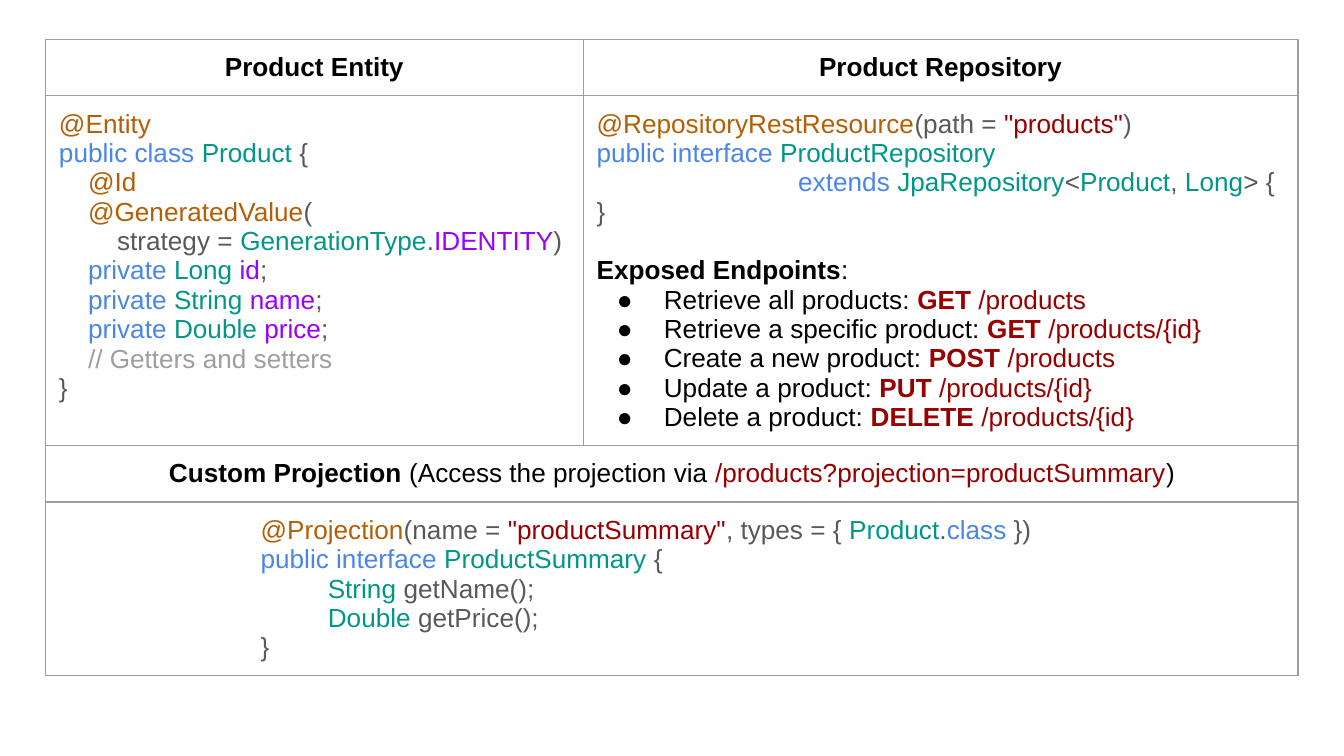
from pptx import Presentation
from pptx import util as u
from pptx.dml.color import RGBColor
from pptx.enum import text
from pptx.oxml.ns import qn
from lxml import etree

FONT, SIZE = "Arial", 14
COLORS = {
    "black": "000000", "annotation": "B45F06", "keyword": "4A86E8",
    "type": "009688", "plain": "595959", "field": "9900FF",
    "string": "980000", "comment": "9E9E9E", "border": "9E9E9E",
}
BORDER_WIDTH = 0.75

# Table geometry in points
LEFT, TOP, HEIGHT, MARGIN = 24.4, 21.2, 360, 7.2
COLUMNS = [288, 383]
ROWS = [26, 165.6, 26, 85]
INDENT, DEEP_INDENT, BULLET_INDENT, HANGING = 108, 144, 36, -25.2


# Content: a cell is a list of (runs, paragraph format); a run is (text, colour[, bold])
def title(label):
    return [([(label, "black", True)], {"centered": True})]


def code(*runs, **options):
    return list(runs), options


def field(type_name, name):
    return code(("    ", "plain"), ("private ", "keyword"), (type_name + " ", "type"),
                (name, "field"), (";", "plain"))


def getter(type_name, name):
    return code((type_name, "type"), (f" {name}();", "plain"), indent=DEEP_INDENT)


ENTITY = [
    code(("@Entity", "annotation")),
    code(("public class ", "keyword"), ("Product", "type"), (" {", "plain")),
    code(("    @Id", "annotation")),
    code(("    @GeneratedValue", "annotation"), ("(", "plain")),
    code(("        strategy = ", "plain"), ("GenerationType", "type"), (".", "plain"),
         ("IDENTITY", "field"), (")", "plain")),
    field("Long", "id"),
    field("String", "name"),
    field("Double", "price"),
    code(("    // Getters and setters", "comment")),
    code(("}", "plain")),
]

ENDPOINTS = [
    ("Retrieve all products", "GET", "/products"),
    ("Retrieve a specific product", "GET", "/products/{id}"),
    ("Create a new product", "POST", "/products"),
    ("Update a product", "PUT", "/products/{id}"),
    ("Delete a product", "DELETE", "/products/{id}"),
]

REPOSITORY = [
    code(("@RepositoryRestResource", "annotation"), ("(path = ", "plain"),
         ('"products"', "string"), (")", "plain")),
    code(("public interface ", "keyword"), ("ProductRepository", "type")),
    code(("extends ", "keyword"), ("JpaRepository", "type"), ("<", "plain"),
         ("Product", "type"), (",", "plain"), (" Long", "type"), ("> {", "plain"),
         indent=INDENT),
    code(("}", "plain")),
    ([("Exposed Endpoints", "black", True), (":", "black")], {"space_before": 15.7}),
] + [
    ([(action + ": ", "black"), (method + " ", "string", True), (route, "string")],
     {"indent": BULLET_INDENT, "bullet": "●"})
    for action, method, route in ENDPOINTS
]

PROJECTION_TITLE = [
    ([("Custom Projection", "black", True), (" (Access the projection via ", "black"),
      ("/products?projection=productSummary", "string"), (")", "black")],
     {"centered": True}),
]

PROJECTION = [
    code(("@Projection", "annotation"), ("(name = ", "plain"),
         ('"productSummary"', "string"), (", types = { ", "plain"), ("Product", "type"),
         (".", "plain"), ("class", "keyword"), (" })", "plain"), indent=INDENT),
    code(("public interface ", "keyword"), ("ProductSummary", "type"), (" {", "plain"),
         indent=INDENT),
    getter("String", "getName"),
    getter("Double", "getPrice"),
    code(("}", "plain"), indent=INDENT),
]

# One list per row; a row with one cell spans both columns
CELLS = [
    [title("Product Entity"), title("Product Repository")],
    [ENTITY, REPOSITORY],
    [PROJECTION_TITLE],
    [PROJECTION],
]


def write_paragraph(paragraph, runs, centered=False, indent=0, bullet=None, space_before=0):
    properties = paragraph._p.get_or_add_pPr()
    if indent:
        properties.set("marL", str(u.Pt(indent)))
        properties.set("indent", str(u.Pt(HANGING) if bullet else 0))
    if centered:
        paragraph.alignment = text.PP_ALIGN.CENTER
    if space_before:
        paragraph.space_before = u.Pt(space_before)
    if bullet:
        color = etree.SubElement(properties, qn("a:buClr"))
        etree.SubElement(color, qn("a:srgbClr"), val=COLORS["black"])
        etree.SubElement(properties, qn("a:buFont"), typeface=FONT)
        etree.SubElement(properties, qn("a:buChar"), char=bullet)
    for content, color_name, *bold in runs:
        run = paragraph.add_run()
        run.text = content
        run.font.name, run.font.size = FONT, u.Pt(SIZE)
        run.font.bold = bool(bold)
        run.font.color.rgb = RGBColor.from_string(COLORS[color_name])


def format_cell(cell):
    cell.margin_left = cell.margin_right = u.Pt(MARGIN)
    cell.margin_top = cell.margin_bottom = u.Pt(MARGIN)
    properties = cell._tc.get_or_add_tcPr()
    for side in ("lnL", "lnR", "lnT", "lnB"):
        line = etree.SubElement(properties, qn("a:" + side), w=str(u.Pt(BORDER_WIDTH)))
        fill = etree.SubElement(line, qn("a:solidFill"))
        etree.SubElement(fill, qn("a:srgbClr"), val=COLORS["border"])
    cell.fill.background()


def main():
    presentation = Presentation()
    presentation.slide_width, presentation.slide_height = u.Pt(720), u.Pt(405)
    slide = presentation.slides.add_slide(presentation.slide_layouts[6])

    # Table grid
    frame = slide.shapes.add_table(len(ROWS), len(COLUMNS), u.Pt(LEFT), u.Pt(TOP),
                                   u.Pt(sum(COLUMNS)), u.Pt(HEIGHT))
    table = frame.table
    table.first_row = table.horz_banding = False
    for column, width in zip(table.columns, COLUMNS):
        column.width = u.Pt(width)
    for row, height in zip(table.rows, ROWS):
        row.height = u.Pt(height)
    frame.height = u.Pt(HEIGHT)
    for cell in table.iter_cells():
        format_cell(cell)

    # Cell text
    for row_index, row_cells in enumerate(CELLS):
        if len(row_cells) == 1:
            table.cell(row_index, 0).merge(table.cell(row_index, len(COLUMNS) - 1))
        for column_index, paragraphs in enumerate(row_cells):
            text_frame = table.cell(row_index, column_index).text_frame
            for index, (runs, options) in enumerate(paragraphs):
                paragraph = text_frame.add_paragraph() if index else text_frame.paragraphs[0]
                write_paragraph(paragraph, runs, **options)

    presentation.save("out.pptx")


if __name__ == "__main__":
    main()
